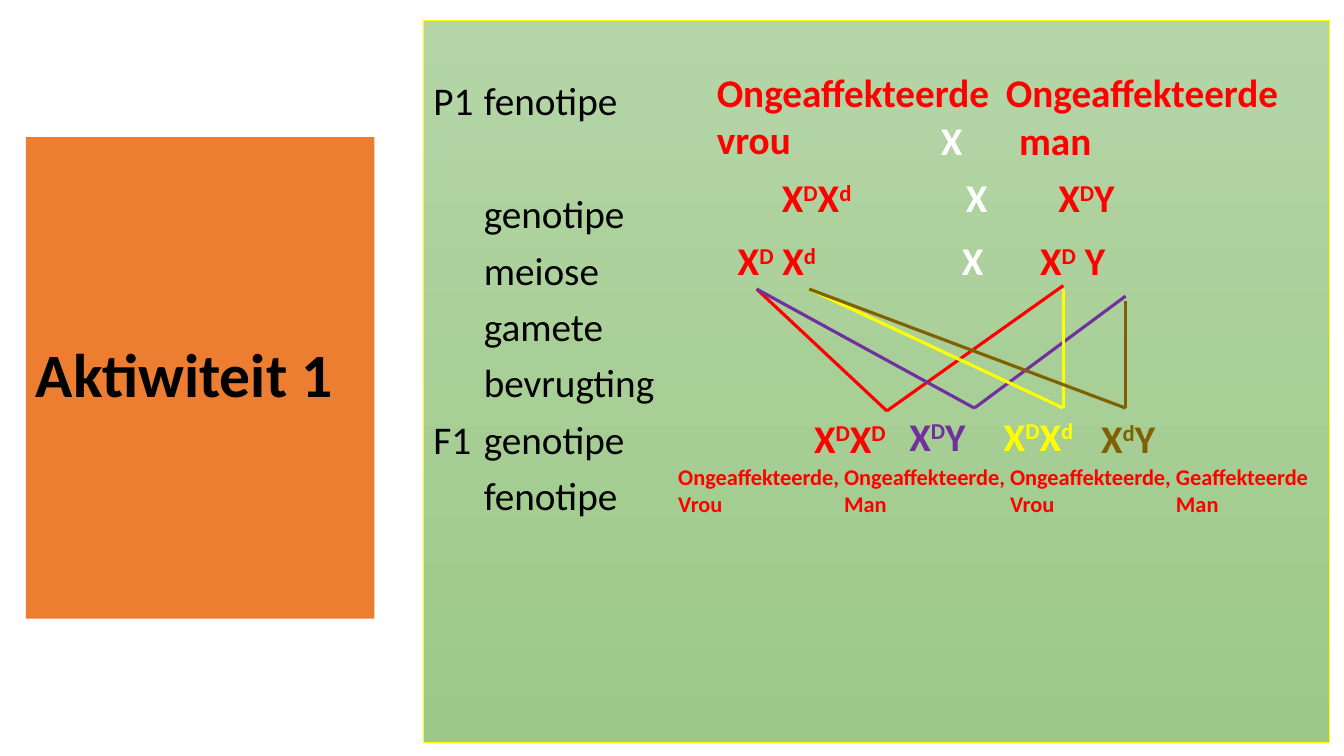
from lxml import etree
from pptx import Presentation
from pptx.dml.color import RGBColor
from pptx.enum import shapes, text
from pptx.oxml import ns
from pptx.util import Pt

C = {"orange": "ED7D31", "green_top": "B5D5A7", "green_end": "9CC987",
     "black": "000000", "white": "FFFFFF", "red": "FF0000",
     "purple": "7030A0", "yellow": "FFFF00", "brown": "806000"}


def rgb(name):
    return RGBColor.from_string(C[name])


def label(x, y, lines, color, size=28):
    """Bold text with its top left corner at x, y; ^ raises the next letter."""
    width = max(len(line) for line in lines) * size * 0.65 + 6
    tf = s.shapes.add_textbox(Pt(x), Pt(y), Pt(width), Pt(size * 1.22 * len(lines))).text_frame
    tf.word_wrap = True
    tf.margin_left = tf.margin_right = tf.margin_top = tf.margin_bottom = 0
    for i, line in enumerate(lines):
        p = tf.paragraphs[0] if i == 0 else tf.add_paragraph()
        p.font.name, p.font.size, p.font.bold = "Calibri", Pt(size), True
        p.font.color.rgb = rgb(color)
        plain, *raised = line.split("^")
        pieces = [(plain, False)]
        for part in raised:
            pieces += [(part[0], True), (part[1:], False)]
        for piece, is_raised in pieces:
            if piece:
                r = p.add_run()
                r.text = piece
                if is_raised:
                    r._r.get_or_add_rPr().set("baseline", "30000")


prs = Presentation()
prs.slide_width, prs.slide_height = Pt(960), Pt(540)
s = prs.slides.add_slide(prs.slide_layouts[6])
RECT = shapes.MSO_SHAPE.RECTANGLE

# Title panel
title = s.shapes.add_shape(RECT, Pt(18.5), Pt(98), Pt(249), Pt(344))
title.shadow.inherit = False
title.fill.solid()
title.fill.fore_color.rgb = rgb("orange")
title.line.fill.background()
tf = title.text_frame
tf.word_wrap = True
tf.vertical_anchor = text.MSO_ANCHOR.MIDDLE
p = tf.paragraphs[0]
p.text = "Aktiwiteit 1"
p.alignment = text.PP_ALIGN.LEFT
p.line_spacing = 0.9
p.font.name, p.font.size, p.font.bold = "Calibri", Pt(44), True
p.font.color.rgb = rgb("black")

# Green panel with the row headings
panel = s.shapes.add_shape(RECT, Pt(302.5), Pt(14.5), Pt(647), Pt(516))
panel.shadow.inherit = False
panel.fill.gradient()
panel.fill.gradient_angle = 270
for stop, name, position in zip(panel.fill.gradient_stops, ("green_top", "green_end"), (0, 1)):
    stop.color.rgb = rgb(name)
    stop.position = position
panel.line.color.rgb = rgb("yellow")
panel.line.width = Pt(0.5)
tf = panel.text_frame
tf.word_wrap = True
tf.vertical_anchor = text.MSO_ANCHOR.TOP
tf.margin_top = Pt(44)
headings = [("P1\tfenotipe", 0), ("\tgenotipe", 50.5), ("\tmeiose", 10), ("\tgamete", 10),
            ("\tbevrugting", 10), ("F1\tgenotipe", 10), ("\tfenotipe", 10)]
for i, (heading, gap) in enumerate(headings):
    p = tf.paragraphs[0] if i == 0 else tf.add_paragraph()
    p.text = heading
    p.alignment = text.PP_ALIGN.LEFT
    p.line_spacing = 0.9
    p.space_before = Pt(gap)
    p.font.name, p.font.size = "Calibri", Pt(28)
    p.font.color.rgb = rgb("black")

# Parents: phenotype, genotype, gametes
label(512, 49, ["Ongeaffekteerde", "vrou"], "red")
label(718.5, 49, ["Ongeaffekteerde"], "red")
label(728, 83, ["man"], "red")
for x, y, mark, color in [
        (672, 83, "X", "white"),
        (558.5, 124, "X^DX^d", "red"), (690, 124, "X", "white"), (756, 124, "X^DY", "red"),
        (527, 169, "X^D X^d", "red"), (687, 169, "X", "white"), (743, 169, "X^D Y", "red")]:
    label(x, y, [mark], color)

# Fertilisation: mother's gamete, child, father's gamete
for color, *points in [
        ("red", (540.5, 206.5), (633.5, 293.5), (759.5, 204)),
        ("purple", (540.5, 206.5), (696, 291.5), (804, 211.5)),
        ("yellow", (578, 206.5), (759.5, 291.5), (759.5, 206.5)),
        ("brown", (578, 206.5), (804, 291.5), (804, 215))]:
    for (x1, y1), (x2, y2) in zip(points, points[1:]):
        line = s.shapes.add_connector(shapes.MSO_CONNECTOR.STRAIGHT, Pt(x1), Pt(y1), Pt(x2), Pt(y2))
        line.line.color.rgb = rgb(color)
        line.line.width = Pt(2.25)
        etree.SubElement(line._element.spPr, ns.qn("a:effectLst"))

# Children: genotype and phenotype
for i, (x, y, genotype, color, state, sex) in enumerate([
        (581.5, 296, "X^DX^D", "red", "Ongeaffekteerde,", "Vrou"),
        (649.5, 294.5, "X^DY", "purple", "Ongeaffekteerde,", "Man"),
        (717, 294.5, "X^DX^d", "yellow", "Ongeaffekteerde,", "Vrou"),
        (786.5, 296, "X^dY", "brown", "Geaffekteerde", "Man")]):
    label(x, y, [genotype], color)
    label(484.5 + 118.5 * i, 331, [state, sex], "red", 16)

prs.save("out.pptx")
